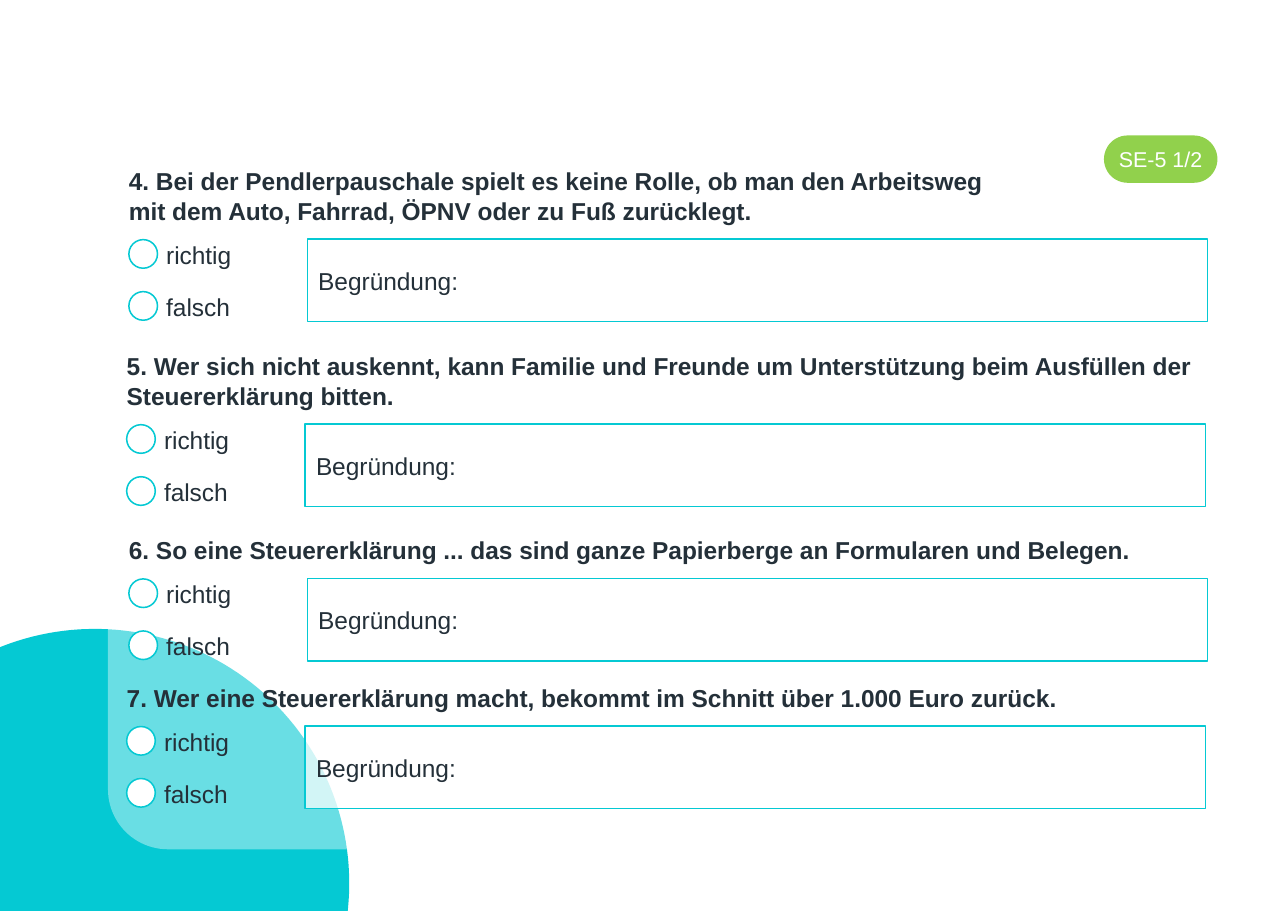
import math
from lxml import etree
from pptx import Presentation
from pptx.dml.color import RGBColor
from pptx.enum import shapes, text
from pptx.oxml import ns
from pptx.util import Pt

QUESTIONS = [
    ("4. Bei der Pendlerpauschale spielt es keine Rolle, ob man den Arbeitsweg \v"
     "mit dem Auto, Fahrrad, ÖPNV oder zu Fuß zurücklegt.", 84.24, 105.12, 2),
    ("5. Wer sich nicht auskennt, kann Familie und Freunde um Unterstützung "
     "beim Ausfüllen der Steuererklärung bitten.", 82.8, 226.08, 2),
    ("6. So eine Steuererklärung ... das sind ganze Papierberge an Formularen "
     "und Belegen.", 84.24, 346.32, 1),
    ("7. Wer eine Steuererklärung macht, bekommt im Schnitt über 1.000 Euro "
     "zurück.", 82.8, 442.8, 1),
]
OPTIONS = ["richtig", "falsch"]
REASON = "Begründung:"
BADGE = "SE-5 1/2"
COLORS = {"teal": "05C9D3", "green": "91D14C", "ink": "243039", "white": "FFFFFF"}
FONT = "Arial"
WIDTH, HEIGHT = 841.68, 595.44
CIRCLE_X, CIRCLE_Y, RADIUS = 61.92, 577.44, 166.32
OPTION_STEP = 34
KINDS = shapes.MSO_SHAPE

prs = Presentation()
prs.slide_width, prs.slide_height = Pt(WIDTH), Pt(HEIGHT)
slide = prs.slides.add_slide(prs.slide_layouts[6])


def rgb(name):
    return RGBColor.from_string(COLORS[name])


def paint(sp, fill, line=None, alpha=None):
    sp.shadow.inherit = False
    sp.fill.solid()
    sp.fill.fore_color.rgb = rgb(fill)
    if alpha:
        color = sp.fill._xPr.find(ns.qn("a:solidFill"))[0]
        etree.SubElement(color, ns.qn("a:alpha"), val=str(alpha * 1000))
    if line:
        sp.line.color.rgb = rgb(line)
        sp.line.width = Pt(1)
    else:
        sp.line.fill.background()


def add_shape(kind, box, fill, line=None, alpha=None):
    sp = slide.shapes.add_shape(kind, *map(Pt, box))
    paint(sp, fill, line, alpha)
    return sp


def write(sp, words, size=16, color="ink", bold=False, align="LEFT",
          anchor="MIDDLE", side=7.2):
    tf = sp.text_frame
    tf.word_wrap = True
    tf.vertical_anchor = getattr(text.MSO_ANCHOR, anchor)
    tf.margin_left = tf.margin_right = Pt(side)
    p = tf.paragraphs[0]
    p.text = words
    p.alignment = getattr(text.PP_ALIGN, align)
    p.font.name, p.font.size, p.font.bold = FONT, Pt(size), bold
    p.font.color.rgb = rgb(color)
    return tf


def add_text(words, box, **style):
    return write(slide.shapes.add_textbox(*map(Pt, box)), words, **style)


def add_corner_circle():
    start = math.pi + math.acos(CIRCLE_X / RADIUS)
    end = 2 * math.pi + math.asin((HEIGHT - CIRCLE_Y) / RADIUS)
    steps = 120
    angles = [start + (end - start) * i / steps for i in range(steps + 1)]
    arc = [(Pt(CIRCLE_X + RADIUS * math.cos(a)), Pt(CIRCLE_Y + RADIUS * math.sin(a)))
           for a in angles]
    builder = slide.shapes.build_freeform(0, Pt(HEIGHT))
    builder.add_line_segments(arc)
    paint(builder.convert_to_shape(), "teal")


def add_question(words, left, top, lines):
    heading_height = 26.64 + 38.88 * (lines - 1)
    tf = add_text(words, (left, top, 704.16, heading_height),
                  bold=True, anchor="TOP", side=0)
    tf.auto_size = text.MSO_AUTO_SIZE.SHAPE_TO_FIT_TEXT
    answer_top = top + 12.24 + 19.44 * lines
    for i, option in enumerate(OPTIONS):
        y = answer_top + i * OPTION_STEP
        add_text(option, (left + 17.28, y, 92.16, 20.16))
        add_shape(KINDS.OVAL, (left, y + 0.4, 18.72, 18.72), "white", "teal")
    box = add_shape(KINDS.RECTANGLE, (left + 116.64, answer_top, 588.24, 54),
                    "white", "teal", 70)
    write(box, REASON)


add_corner_circle()
panel = add_shape(KINDS.ROUNDED_RECTANGLE, (70.56, 119.52, 725.76, 435.6),
                  "white", alpha=40)
panel.adjustments[0] = 0.09
badge = add_shape(KINDS.ROUNDED_RECTANGLE, (721.44, 88.56, 74.16, 30.96), "green")
badge.adjustments[0] = 0.5
write(badge, BADGE, size=14, color="white", align="CENTER", side=2.88)
for question in QUESTIONS:
    add_question(*question)

prs.save("out.pptx")
